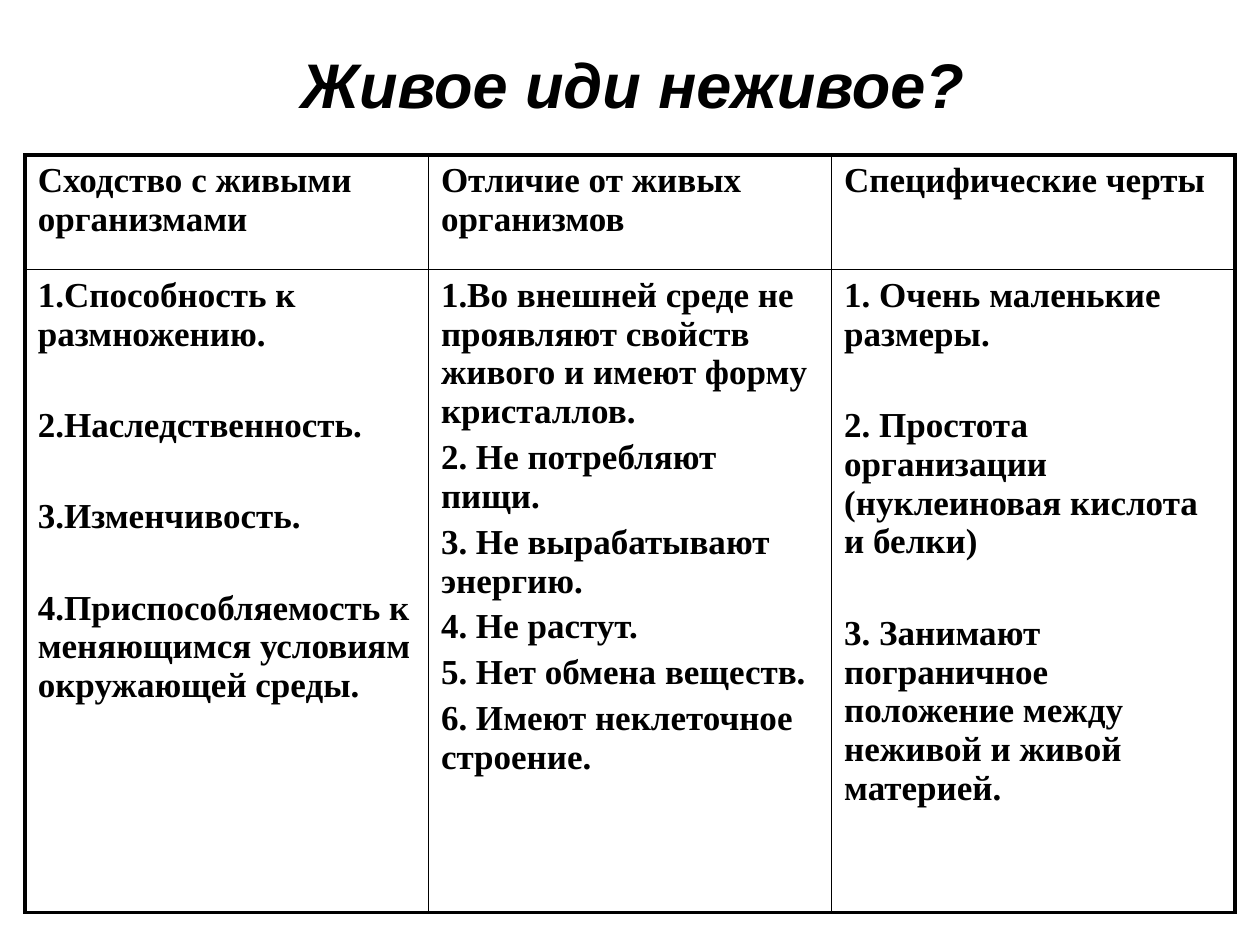
import pptx
import pptx.dml.color
import pptx.enum.text
import pptx.oxml.ns
import pptx.util
from lxml import etree

Inches, Pt = pptx.util.Inches, pptx.util.Pt

TITLE = "Живое иди неживое?"
BLACK = "000000"
TIGHT, WIDE = 4, 30  # points before a paragraph
OUTER, INNER = 2.25, 1  # border widths in points

# heading, gap between items, number of leading items numbered automatically, items
COLUMNS = [
    ("Сходство с живыми организмами", WIDE, 4, [
        "Способность к размножению.",
        "Наследственность.",
        "Изменчивость.",
        "Приспособляемость к меняющимся условиям окружающей среды.",
    ]),
    ("Отличие от живых организмов", TIGHT, 1, [
        "Во внешней среде не проявляют свойств живого и имеют форму кристаллов.",
        "2. Не потребляют пищи.",
        "3. Не вырабатывают энергию.",
        "4. Не растут.",
        "5. Нет обмена веществ.",
        "6. Имеют неклеточное строение.",
    ]),
    ("Специфические черты", WIDE, 0, [
        "1. Очень маленькие размеры.",
        "2. Простота организации (нуклеиновая кислота и белки)",
        "3. Занимают пограничное положение между неживой и живой материей.",
    ]),
]
ROW_HEIGHTS = [0.91, 5.1]
COLUMN_WIDTH = 3.2


def rgb(value):
    return pptx.dml.color.RGBColor.from_string(value)


def add_element(parent, tag, **attributes):
    return etree.SubElement(parent, pptx.oxml.ns.qn(tag), attributes)


def write(paragraph, text, *, size=20, font="Times New Roman", italic=False,
          before=0, align=pptx.enum.text.PP_ALIGN.LEFT, numbered=False):
    paragraph.alignment = align
    paragraph.space_before = Pt(before)
    if numbered:
        properties = paragraph._p.get_or_add_pPr()
        properties.set("marL", "0")
        properties.set("indent", "0")
        add_element(properties, "a:buFontTx")
        add_element(properties, "a:buAutoNum", type="arabicPeriod")
    run = paragraph.add_run()
    run.text = text
    run.font.size, run.font.name = Pt(size), font
    run.font.bold, run.font.italic = True, italic
    run.font.color.rgb = rgb(BLACK)


def set_borders(cell, row, column):
    """Draw heavy lines on the outside of the table and thin ones inside."""
    on_edge = {
        "L": column == 0,
        "R": column == len(COLUMNS) - 1,
        "T": row == 0,
        "B": row == len(ROW_HEIGHTS) - 1,
    }
    properties = cell._tc.get_or_add_tcPr()
    for side, outside in on_edge.items():
        line = add_element(properties, f"a:ln{side}", w=str(Pt(OUTER if outside else INNER)))
        add_element(add_element(line, "a:solidFill"), "a:srgbClr", val=BLACK)


def add_title(slide):
    box = slide.shapes.add_textbox(Inches(0.51), 0, Inches(9.02), Inches(1.06))
    frame = box.text_frame
    frame.word_wrap = True
    frame.vertical_anchor = pptx.enum.text.MSO_ANCHOR.BOTTOM
    frame.margin_bottom = Inches(0.1)
    write(frame.paragraphs[0], TITLE, size=36, font="Arial", italic=True,
          align=pptx.enum.text.PP_ALIGN.CENTER)


def add_comparison(slide):
    table = slide.shapes.add_table(
        len(ROW_HEIGHTS), len(COLUMNS), Inches(0.2), Inches(1.23),
        Inches(COLUMN_WIDTH * len(COLUMNS)), Inches(sum(ROW_HEIGHTS))).table
    table.first_row = table.horz_banding = False
    for row, height in zip(table.rows, ROW_HEIGHTS):
        row.height = Inches(height)
    for c, (heading, gap, numbered_count, items) in enumerate(COLUMNS):
        table.columns[c].width = Inches(COLUMN_WIDTH)
        for r in range(len(ROW_HEIGHTS)):
            set_borders(table.cell(r, c), r, c)
            table.cell(r, c).fill.background()
        write(table.cell(0, c).text_frame.paragraphs[0], heading)
        frame = table.cell(1, c).text_frame
        for i, item in enumerate(items):
            paragraph = frame.add_paragraph() if i else frame.paragraphs[0]
            write(paragraph, item, before=gap if i else 0, numbered=i < numbered_count)


def main():
    deck = pptx.Presentation()
    deck.slide_width, deck.slide_height = Inches(10), Inches(7.5)
    slide = deck.slides.add_slide(deck.slide_layouts[6])
    slide.background.fill.solid()
    slide.background.fill.fore_color.rgb = rgb("FFFFFF")
    add_title(slide)
    add_comparison(slide)
    deck.save("out.pptx")


if __name__ == "__main__":
    main()
